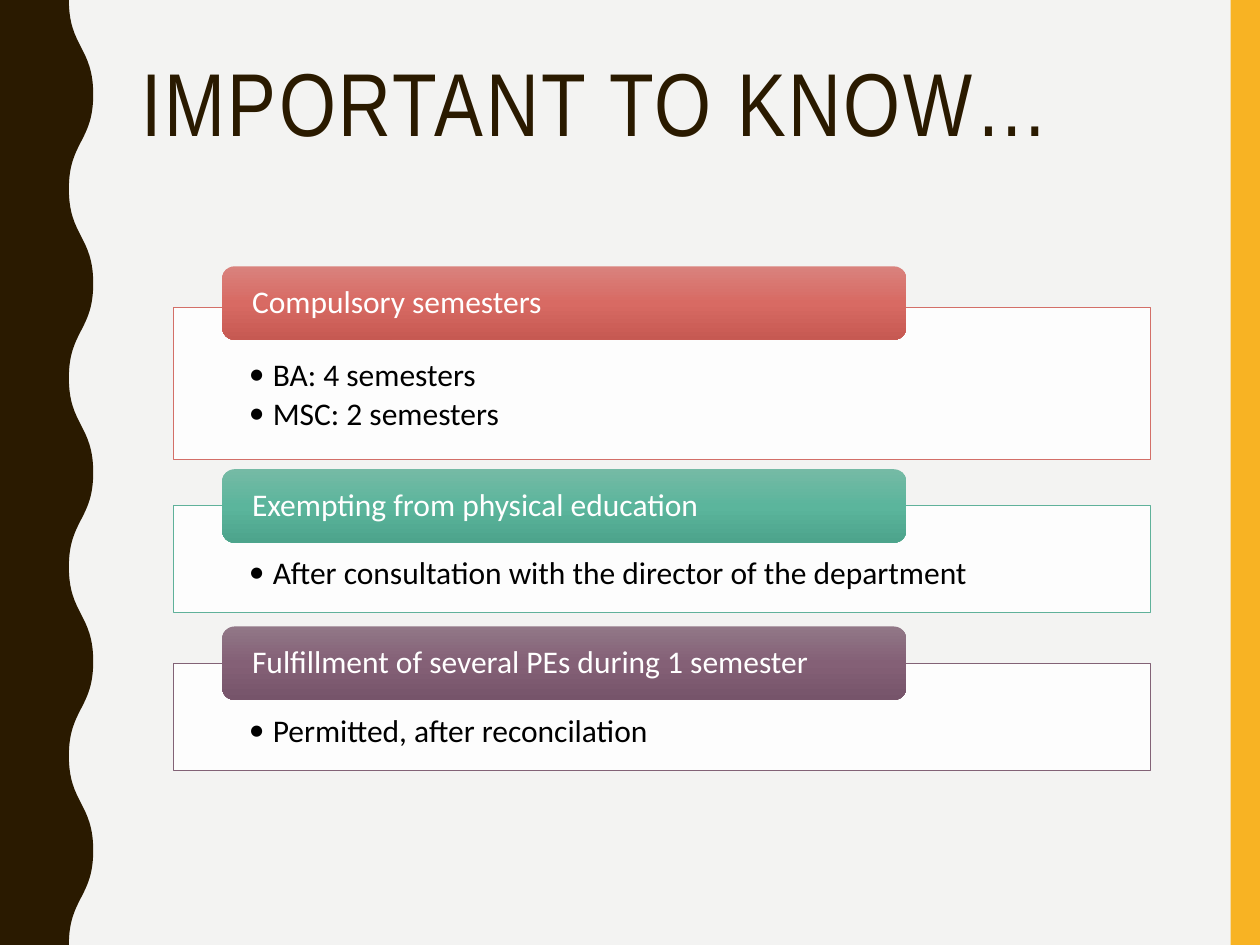
from copy import deepcopy
from lxml.etree import SubElement
from pptx import Presentation
from pptx.dml.color import RGBColor
from pptx.enum.shapes import MSO_SHAPE
from pptx.enum.text import MSO_ANCHOR, MSO_AUTO_SIZE, PP_ALIGN
from pptx.oxml.ns import qn
from pptx.util import Cm, Pt

PAPER = RGBColor(0xF3, 0xF3, 0xF2)
BROWN = RGBColor(0x2A, 0x1A, 0x00)
YELLOW = RGBColor(0xF8, 0xB3, 0x23)
WHITE = RGBColor(0xFF, 0xFF, 0xFF)
BLACK = RGBColor(0x00, 0x00, 0x00)
RED = RGBColor(0xD3, 0x6F, 0x68)
RED_SHADES = [RGBColor(0xD9, 0x82, 0x7D), RGBColor(0xD8, 0x6A, 0x63), RGBColor(0xC6, 0x59, 0x52)]
GREEN = RGBColor(0x5F, 0xB1, 0x9A)
GREEN_SHADES = [RGBColor(0x75, 0xBA, 0xA5), RGBColor(0x5B, 0xB5, 0x9C), RGBColor(0x4D, 0xA4, 0x8C)]
PLUM = RGBColor(0x82, 0x62, 0x76)
PLUM_SHADES = [RGBColor(0x91, 0x77, 0x87), RGBColor(0x84, 0x60, 0x76), RGBColor(0x76, 0x54, 0x6A)]


def add_block(shape_type, left, top, width, height):
    block = page.shapes.add_shape(shape_type, Cm(left), Cm(top), Cm(width), Cm(height))
    block.shadow.inherit = False
    block.line.fill.background()
    return block


def write_lines(shape, lines, color, space_after):
    shape.text_frame.text = "\n".join(lines)
    shape.text_frame.word_wrap = True
    for para in shape.text_frame.paragraphs:
        para.alignment = PP_ALIGN.LEFT
        para.line_spacing = 0.9
        para.space_after = Pt(space_after)
        for span in para.runs:
            span.font.name = "Calibri"
            span.font.size = Pt(18)
            span.font.color.rgb = color


deck = Presentation()
deck.slide_width, deck.slide_height = Cm(25.4), Cm(19.05)
page = deck.slides.add_slide(deck.slide_layouts[5])
page.background.fill.solid()
page.background.fill.fore_color.rgb = PAPER

# Yellow strip on the right
strip = add_block(MSO_SHAPE.RECTANGLE, 24.81, 0, 0.59, 19.05)
strip.fill.solid()
strip.fill.fore_color.rgb = YELLOW

# Brown wavy band on the left: ten half waves between trough and crest
TROUGH, CREST, HALF_WAVE = Cm(1.39), Cm(1.88), Cm(1.905)
turns = [(CREST if turn % 2 else TROUGH, HALF_WAVE * turn) for turn in range(11)]
outline = page.shapes.build_freeform(0, 0)
outline.add_line_segments(turns + [(0, Cm(19.05))], close=True)
band = outline.convert_to_shape()
band.shadow.inherit = False
band.fill.solid()
band.fill.fore_color.rgb = BROWN
band.line.fill.background()

# Bend the straight wave segments into curves that leave each turn vertically
segments = list(band._element.iter(qn("a:lnTo")))[1:11]
for segment, (start_x, start_y), (end_x, end_y) in zip(segments, turns, turns[1:]):
    middle = (start_y + end_y) // 2
    curve = segment.makeelement(qn("a:cubicBezTo"), {})
    for x, y in ((start_x, middle), (end_x, middle), (end_x, end_y)):
        SubElement(curve, qn("a:pt"), x=str(int(x)), y=str(int(y)))
    segment.getparent().replace(segment, curve)

# Title
title = page.shapes.title
title.left, title.top, title.width, title.height = Cm(2.6), Cm(1.07), Cm(21.21), Cm(4.14)
title.text_frame.text = "IMPORTANT TO KNOW…"
title.text_frame.auto_size = MSO_AUTO_SIZE.NONE
title.text_frame.vertical_anchor = MSO_ANCHOR.TOP
heading = title.text_frame.paragraphs[0]
heading.alignment = PP_ALIGN.LEFT
heading.line_spacing = 0.9
span = heading.runs[0]
span.font.name = "Arial Narrow"
span.font.size = Pt(51)
span.font.color.rgb = BROWN
span.font._element.set("spc", "150")

# Sections: label, bullets, label top, box top, box height, line colour, label shades
sections = [
    ("Compulsory semesters", ["BA: 4 semesters", "MSC: 2 semesters"],
     5.37, 6.2, 3.07, RED, RED_SHADES),
    ("Exempting from physical education",
     ["After consultation with the director of the department"],
     9.46, 10.19, 2.16, GREEN, GREEN_SHADES),
    ("Fulfillment of several PEs during 1 semester", ["Permitted, after reconcilation"],
     12.63, 13.37, 2.16, PLUM, PLUM_SHADES),
]
for label_text, bullets, label_top, box_top, box_height, line_color, shades in sections:
    # Outlined box with bullets
    box = add_block(MSO_SHAPE.RECTANGLE, 3.5, box_top, 19.69, box_height)
    box.fill.solid()
    box.fill.fore_color.rgb = WHITE
    white = box._element.spPr.find(qn("a:solidFill"))[0]
    SubElement(white, qn("a:alpha")).set("val", "90000")
    box.line.color.rgb = line_color
    box.line.width = Pt(0.5)
    frame = box.text_frame
    frame.vertical_anchor = MSO_ANCHOR.TOP
    frame.margin_left = frame.margin_right = Cm(1.52)
    frame.margin_top, frame.margin_bottom = Cm(1.04), Cm(0.36)
    write_lines(box, bullets, BLACK, 2.7)
    for para in frame.paragraphs:
        para.level = 1
        properties = para._p.get_or_add_pPr()
        properties.set("marL", str(int(Cm(0.48))))
        properties.set("indent", str(-int(Cm(0.48))))
        SubElement(properties, qn("a:buFont"), typeface="Calibri")
        SubElement(properties, qn("a:buChar"), char="•")

    # Rounded label with a three-step gradient
    label = add_block(MSO_SHAPE.ROUNDED_RECTANGLE, 4.48, label_top, 13.79, 1.48)
    label.fill.gradient()
    label.fill.gradient_angle = 270
    first_stop = label._element.spPr.find(qn("a:gradFill")).find(qn("a:gsLst"))[0]
    first_stop.addnext(deepcopy(first_stop))
    for stop, shade, position in zip(label.fill.gradient_stops, shades, (0, 0.5, 1)):
        stop.color.rgb = shade
        stop.position = position
    frame = label.text_frame
    frame.vertical_anchor = MSO_ANCHOR.MIDDLE
    frame.margin_left = frame.margin_right = Cm(0.53)
    frame.margin_top = frame.margin_bottom = 0
    write_lines(label, [label_text], WHITE, 0)

deck.save("out.pptx")
